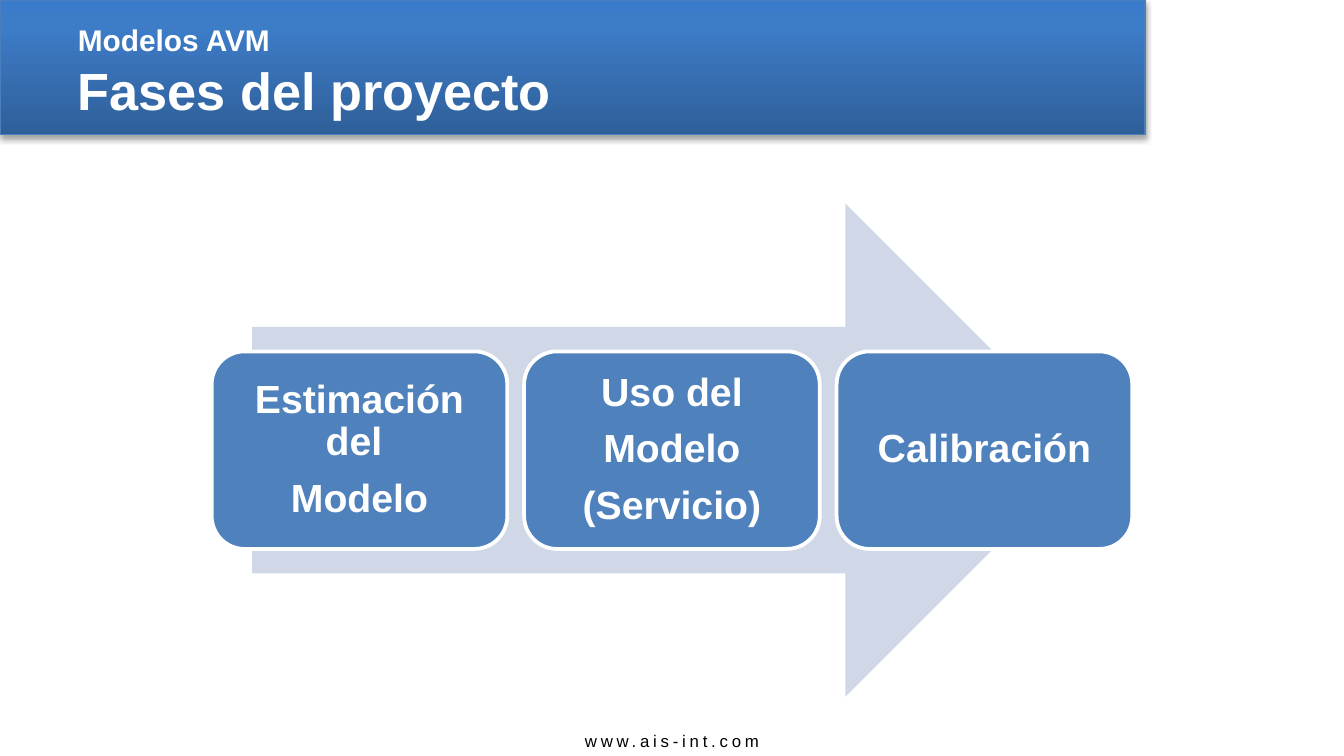
from lxml.etree import fromstring
from pptx import Presentation
from pptx.dml.color import RGBColor
from pptx.enum.shapes import MSO_SHAPE
from pptx.enum.text import MSO_ANCHOR, PP_ALIGN
from pptx.oxml.ns import nsdecls
from pptx.util import Inches, Pt

TITLE = [("Modelos AVM", 16), ("Fases del proyecto", 28)]
PHASES = [
    ["Estimación del ", "Modelo"],
    ["Uso del", "Modelo", "(Servicio)"],
    ["Calibración"],
]
FOOTER = "www.ais-int.com"
COLORS = {"white": "FFFFFF", "black": "000000", "card": "4F81BD",
          "arrow": "D0D8E8", "edge": "4B7EBC"}
BANNER_STOPS = [(0, "2F5F99"), (80, "3D7CC7"), (100, "3A7CCB")]
W = 10
H = W * 9 / 16
CARD_W, CARD_H = 2.2, 1.47
ROW_W = 6.85
ARROW_W, ARROW_H = 6.25, 3.67
MID_Y = 3.35


def color(name):
    return RGBColor.from_string(COLORS[name])


def box(left, top, width, height):
    return [Inches(v) for v in (left, top, width, height)]


def style(obj, **values):
    for name, value in values.items():
        setattr(obj, name, value)


def write(p, text, size, ink="white", bold=True):
    r = p.add_run()
    r.text = text
    style(r.font, name="Arial", size=Pt(size), bold=bold)
    r.font.color.rgb = color(ink)
    return r


def add_shape(kind, place, fill, line=None, width=0):
    sp = s.shapes.add_shape(kind, *box(*place))
    sp.shadow.inherit = False
    sp.fill.solid()
    sp.fill.fore_color.rgb = color(fill)
    if line:
        sp.line.color.rgb = color(line)
        sp.line.width = Pt(width)
    else:
        sp.line.fill.background()
    return sp


def add_banner():
    sp = add_shape(MSO_SHAPE.RECTANGLE, (0, 0, 8.52, 1), "card", "edge", 0.75)
    stops = "".join(f'<a:gs pos="{pos * 1000}"><a:srgbClr val="{c}"/></a:gs>'
                    for pos, c in BANNER_STOPS)
    props = sp._element.spPr
    props.replace(props.find("{*}solidFill"), fromstring(
        f'<a:gradFill {nsdecls("a")}><a:gsLst>{stops}</a:gsLst>'
        '<a:lin ang="16200000" scaled="0"/></a:gradFill>'))
    props.find("{*}effectLst").append(fromstring(
        f'<a:outerShdw {nsdecls("a")} blurRad="{Pt(3.1)}" dist="{Pt(1.8)}" '
        'dir="5400000" rotWithShape="0"><a:srgbClr val="000000">'
        '<a:alpha val="35000"/></a:srgbClr></a:outerShdw>'))
    s.shapes._spTree.insert(2, sp._element)


def add_title():
    sp = s.shapes.title
    sp.left, sp.top, sp.width, sp.height = box(0.48, 0.06, 7.95, 0.94)
    style(sp.text_frame, vertical_anchor=MSO_ANCHOR.MIDDLE, word_wrap=True)
    p = sp.text_frame.paragraphs[0]
    p.alignment = PP_ALIGN.LEFT
    for i, (text, size) in enumerate(TITLE):
        if i:
            p.add_line_break()
        write(p, text, size)


def add_card(col, lines):
    step = (ROW_W - CARD_W) / (len(PHASES) - 1)
    left = (W - ROW_W) / 2 + col * step
    sp = add_shape(MSO_SHAPE.ROUNDED_RECTANGLE,
                   (left, MID_Y - CARD_H / 2, CARD_W, CARD_H), "card", "white", 2)
    tf = sp.text_frame
    pad = Inches(0.09)
    style(tf, word_wrap=True, vertical_anchor=MSO_ANCHOR.MIDDLE, margin_left=pad,
          margin_right=pad, margin_top=pad, margin_bottom=pad)
    for i, text in enumerate(lines):
        p = tf.add_paragraph() if i else tf.paragraphs[0]
        style(p, alignment=PP_ALIGN.CENTER, line_spacing=0.9, space_after=Pt(7.4))
        write(p, text, 21)


def add_footer():
    tf = s.shapes.add_textbox(*box(0, 5.39, W, 0.25)).text_frame
    tf.word_wrap = True
    p = tf.paragraphs[0]
    p.alignment = PP_ALIGN.CENTER
    r = write(p, FOOTER, 9, "black", False)
    r.font._element.set("spc", "200")


prs = Presentation()
style(prs, slide_width=Inches(W), slide_height=Inches(H))
s = prs.slides.add_slide(prs.slide_layouts[5])
add_banner()
add_title()
add_footer()
add_shape(MSO_SHAPE.RIGHT_ARROW,
          ((W - ARROW_W) / 2, MID_Y - ARROW_H / 2, ARROW_W, ARROW_H), "arrow")
for col, lines in enumerate(PHASES):
    add_card(col, lines)
prs.save("out.pptx")
